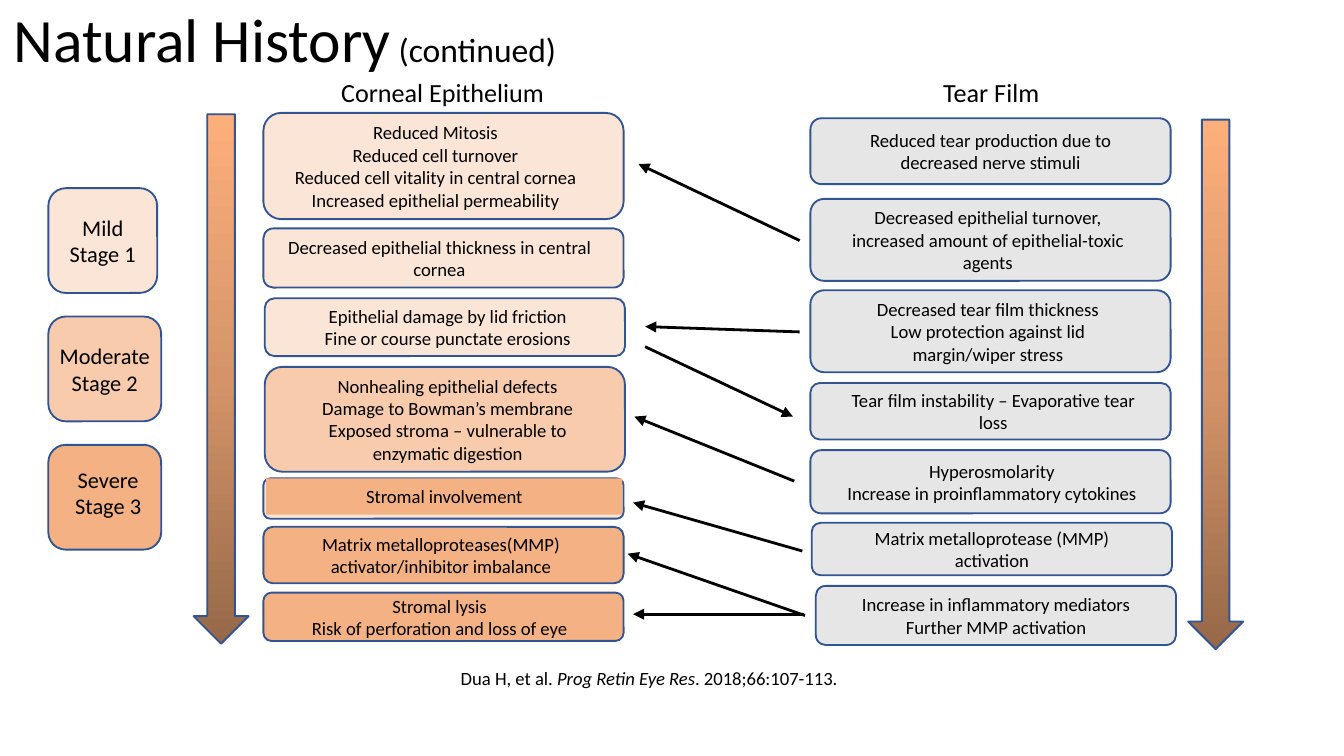
from dataclasses import dataclass
from copy import deepcopy
from lxml.etree import SubElement
from pptx import Presentation
from pptx.dml.color import RGBColor
from pptx.enum.shapes import MSO_CONNECTOR as Connector, MSO_SHAPE as Shape
from pptx.enum.text import MSO_ANCHOR as Anchor, MSO_AUTO_SIZE as AutoSize, PP_ALIGN as Align
from pptx.oxml.ns import qn
from pptx.util import Inches, Pt


@dataclass(frozen=True)
class Theme:
    """Colours, font and type sizes of the slide."""
    font: str = "Calibri"
    ink: str = "000000"
    outline: str = "325491"
    mild: str = "FBE5D6"
    moderate: str = "F8CBAD"
    severe: str = "F4B183"
    tear: str = "E7E6E6"
    gradient: tuple = ((0, "966849"), (0.5, "D59468"), (1, "FDAF7B"))
    title: int = 33
    subtitle: int = 18
    heading: int = 14
    stage: int = 12
    body: int = 10


@dataclass(frozen=True)
class Card:
    """A box of a column, placed in grid rows, with optional nudges in grid columns."""
    top: float
    height: float
    fill: str
    text: str
    nudge: float = 0
    text_nudge: float = 0
    text_width: float = 22.7


THEME = Theme()
COLUMNS, ROWS = 100, 56.25
CELL = Inches(10) / COLUMNS
CARD_WIDTH = 26.8
CORNER_INSET = 0.05

EPITHELIUM = (
    Card(8.4, 7.9, THEME.mild, "Reduced Mitosis\nReduced cell turnover\n"
         "Reduced cell vitality in central cornea\nIncreased epithelial permeability", 0, -0.6),
    Card(17, 4.4, THEME.mild, "Decreased epithelial thickness in central cornea", 0, -0.3, 22.9),
    Card(22.2, 4.3, THEME.mild, "Epithelial damage by lid friction\n"
         "Fine or course punctate erosions", 0.1, 0.2),
    Card(27.3, 7.8, THEME.moderate, "Nonhealing epithelial defects\nDamage to Bowman’s membrane\n"
         "Exposed stroma – vulnerable to enzymatic digestion", 0.1, 0.2),
    Card(35.6, 3, THEME.mild, ""),
    Card(39.2, 4.2, THEME.severe, "Matrix metalloproteases(MMP) activator/inhibitor imbalance", 0, -0.2),
    Card(44.1, 3.6, THEME.severe, "Stromal lysis\nRisk of perforation and loss of eye", 0, -0.3),
)
TEAR_FILM = (
    Card(8.8, 4.9, THEME.tear, "Reduced tear production due to decreased nerve stimuli"),
    Card(14.8, 6.1, THEME.tear,
         "Decreased epithelial turnover, increased amount of epithelial-toxic agents", 0, -0.2, 21.2),
    Card(21.6, 6.1, THEME.tear,
         "Decreased tear film thickness\nLow protection against lid margin/wiper stress", 0, -0.2, 21.2),
    Card(28.5, 4.2, THEME.tear, "Tear film instability – Evaporative tear loss", 0, 0.2),
    Card(33.5, 4.7, THEME.tear, "Hyperosmolarity\nIncrease in proinflammatory cytokines", 0, 0.1),
    Card(38.9, 3.9, THEME.tear, "Matrix metalloprotease (MMP) activation", 0.1),
    Card(43.6, 4.4, THEME.tear, "Increase in inflammatory mediators\nFurther MMP activation", 0.4),
)
STAGES = (("Mild\nStage 1", THEME.mild, 8.1, 0, 0),
          ("Moderate Stage 2", THEME.moderate, 8.4, 0, 0),
          ("Severe Stage 3", THEME.severe, 8.4, 0.5, 0.7))
LINKS = (
    (59.5, 17.9, 47.5, 12.2), (59.5, 24.7, 48, 24.3), (48, 25.8, 59, 31),
    (59.1, 35.8, 47.2, 31), (59.7, 41, 47.1, 37.4), (59.8, 45.7, 47.1, 45.7),
    (59.9, 45.8, 46.7, 41.2),
)


def grid(*lengths):
    """Turn grid lengths into slide units."""
    return [round(length * CELL) for length in lengths]


def write(frame, text, size=THEME.body, align=Align.LEFT, italic=False):
    """Append text to the last paragraph of a frame, with a new paragraph at each line break."""
    for index, line in enumerate(text.split("\n")):
        paragraph = frame.add_paragraph() if index else frame.paragraphs[-1]
        paragraph.alignment = align
        run = paragraph.add_run()
        run.text = line
        run.font.name, run.font.size, run.font.italic = THEME.font, Pt(size), italic
        run.font.color.rgb = RGBColor.from_string(THEME.ink)


def add_box(slide, kind, place, fill=None, outline=True):
    """Add a preset shape with a middle-anchored, inset-free text frame."""
    shape = slide.shapes.add_shape(kind, *grid(*place))
    shape.shadow.inherit = False
    if fill:
        shape.fill.solid()
        shape.fill.fore_color.rgb = RGBColor.from_string(fill)
    if outline:
        shape.line.color.rgb = RGBColor.from_string(THEME.outline)
        shape.line.width = Pt(1)
    else:
        shape.line.fill.background()
    frame = shape.text_frame
    frame.word_wrap, frame.vertical_anchor = True, Anchor.MIDDLE
    frame.margin_left = frame.margin_right = frame.margin_top = frame.margin_bottom = 0
    return shape


def add_card(slide, left, card):
    """Add one rounded card of a column."""
    place = (left + card.nudge, card.top, CARD_WIDTH, card.height)
    frame = add_box(slide, Shape.ROUNDED_RECTANGLE, place, card.fill).text_frame
    if card.text:
        inset = (CARD_WIDTH - card.text_width) / 2 - CORNER_INSET * card.height
        frame.margin_left, frame.margin_right = grid(
            inset + card.text_nudge, inset - card.text_nudge)
        write(frame, card.text, align=Align.CENTER)


def add_label(slide, left, top, width, height):
    """Add a text box and return its frame."""
    frame = slide.shapes.add_textbox(*grid(left, top, width, height)).text_frame
    frame.word_wrap = True
    return frame


def add_progress_arrow(slide, left, top):
    """Add a tall down arrow that darkens towards its head."""
    shape = add_box(slide, Shape.DOWN_ARROW, (left, top, 4.1, 39.4))
    shape.fill.gradient()
    shape.fill.gradient_angle = 90
    stop_list = next(shape.element.iter(qn("a:gsLst")))
    stop_list.insert(1, deepcopy(stop_list[0]))
    for stop, (position, color) in zip(shape.fill.gradient_stops, THEME.gradient):
        stop.position = position
        stop.color.rgb = RGBColor.from_string(color)


def add_link(slide, *ends):
    """Add a straight line with a triangle at its end."""
    link = slide.shapes.add_connector(Connector.STRAIGHT, *grid(*ends))
    link.line.color.rgb = RGBColor.from_string(THEME.ink)
    link.line.width = Pt(1.5)
    properties = link.element.spPr
    SubElement(properties.find(qn("a:ln")), qn("a:tailEnd"), type="triangle")
    SubElement(properties, qn("a:effectLst"))


def add_title(slide):
    """Place and fill the title placeholder."""
    title = slide.shapes.title
    title.left, title.top, title.width, title.height = grid(0, -2.3, 86.2, 10.9)
    frame = title.text_frame
    frame.word_wrap, frame.auto_size = True, AutoSize.NONE
    frame.vertical_anchor = Anchor.MIDDLE
    write(frame, "Natural History", THEME.title)
    write(frame, " (continued)", THEME.subtitle)
    frame.paragraphs[0].line_spacing = 0.9


def main():
    """Build the slide and save it."""
    presentation = Presentation()
    presentation.slide_width, presentation.slide_height = grid(COLUMNS, ROWS)
    slide = presentation.slides.add_slide(presentation.slide_layouts[5])
    add_title(slide)
    for heading, heading_left, left, cards in (
            ("Corneal Epithelium", 24.4, 19.6, EPITHELIUM), ("Tear Film", 69.2, 60.3, TEAR_FILM)):
        write(add_label(slide, heading_left, 5.2, 18.6, 3.4), heading, THEME.heading)
        for card in cards:
            add_card(slide, left, card)
    stromal = add_box(slide, Shape.RECTANGLE, (19.8, 35.6, 26.5, 2.7), THEME.severe, outline=False)
    write(stromal.text_frame, "Stromal involvement", align=Align.CENTER)
    add_progress_arrow(slide, 14.4, 8.5)
    add_progress_arrow(slide, 88.4, 8.9)
    for index, (text, fill, width, left_inset, bottom_inset) in enumerate(STAGES):
        place = (3.6, 14 + 9.55 * index, width, 7.8)
        frame = add_box(slide, Shape.ROUNDED_RECTANGLE, place, fill).text_frame
        frame.margin_left, frame.margin_bottom = grid(left_inset, bottom_inset)
        write(frame, text, THEME.stage, Align.CENTER)
    for ends in LINKS:
        add_link(slide, *ends)
    citation = add_label(slide, 33.3, 49.1, 64.4, 2.7)
    write(citation, "Dua H, et al. ")
    write(citation, "Prog Retin Eye Res", italic=True)
    write(citation, ". 2018;66:107-113.")
    presentation.save("out.pptx")


if __name__ == "__main__":
    main()
